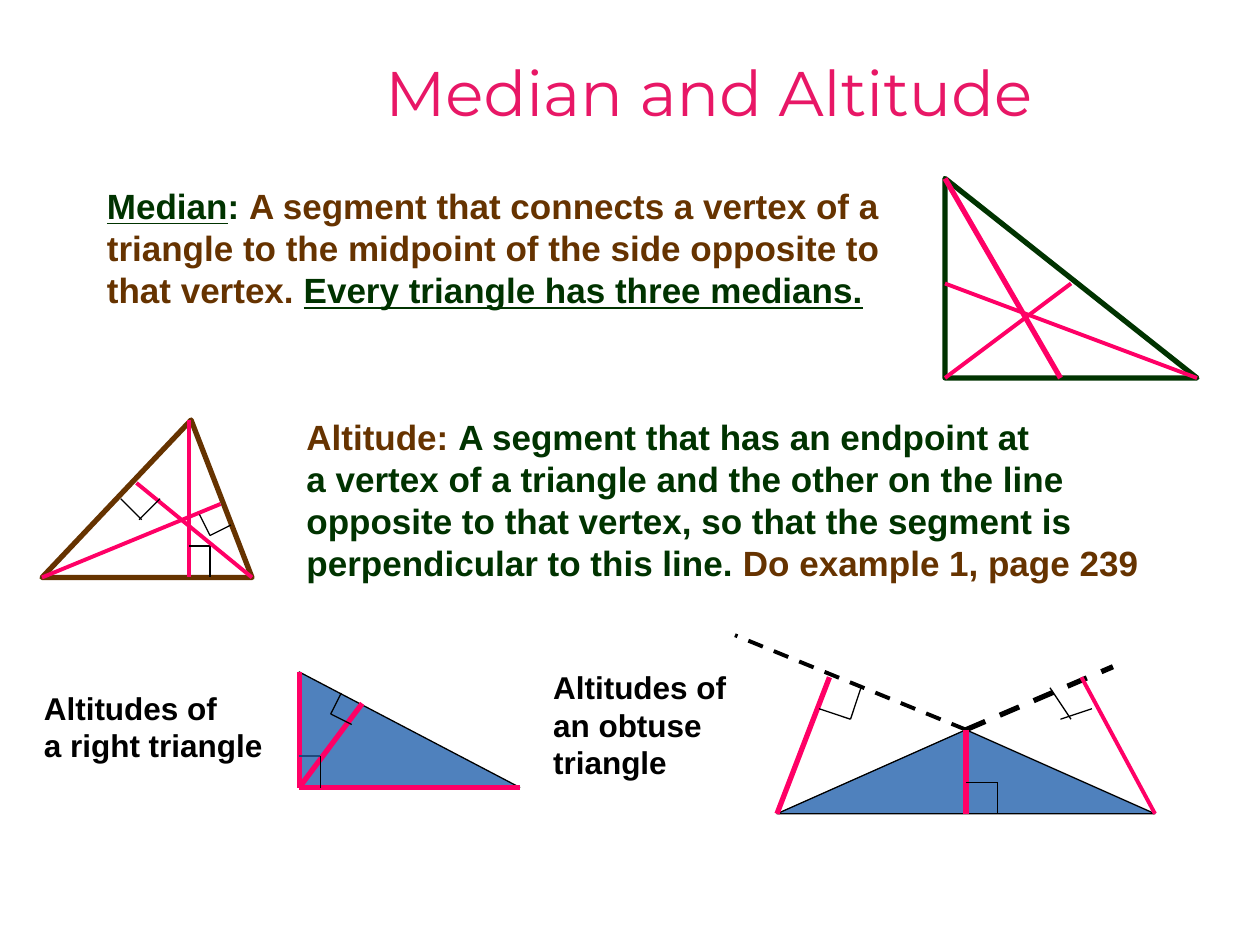
from dataclasses import dataclass
from itertools import pairwise

from lxml import etree
from pptx import Presentation
from pptx import util as u
from pptx.dml.color import RGBColor
from pptx.enum import dml, shapes, text
from pptx.oxml.ns import qn

UNITS_PER_INCH = 24
GREEN = RGBColor(0x00, 0x33, 0x00)
BROWN = RGBColor(0x66, 0x33, 0x00)
PINK = RGBColor(0xFF, 0x00, 0x66)
TITLE_PINK = RGBColor(0xE8, 0x17, 0x66)
BLACK = RGBColor(0x00, 0x00, 0x00)
BLUE = RGBColor(0x4F, 0x81, 0xBD)
NAVY = RGBColor(0x1F, 0x49, 0x7D)
RIGHT = shapes.MSO_SHAPE.RIGHT_TRIANGLE
ISOSCELES = shapes.MSO_SHAPE.ISOSCELES_TRIANGLE

Point = tuple[float, float]


@dataclass(frozen=True)
class Stroke:
    points: tuple[Point, ...]
    color: RGBColor = PINK
    width: float = 2.25
    dashed: bool = False


@dataclass(frozen=True)
class Figure:
    kind: shapes.MSO_SHAPE
    area: tuple[float, float, float, float]
    color: RGBColor
    width: float
    strokes: tuple[Stroke, ...]
    fill: RGBColor | None = None
    apex: float | None = None


@dataclass(frozen=True)
class Span:
    words: str
    color: RGBColor = BLACK
    underline: bool = False


@dataclass(frozen=True)
class Passage:
    area: tuple[float, float, float, float]
    size: float
    paras: tuple[tuple[Span, ...], ...]


def corner(*points: Point) -> Stroke:
    return Stroke(points, BLACK, 0.75)


FIGURES = (
    Figure(RIGHT, (180, 34, 48, 38), GREEN, 3, (
        Stroke(((180, 72), (204, 54))),
        Stroke(((180, 34), (202, 72)), width=3),
        Stroke(((180, 54), (228, 72))),
    )),
    Figure(ISOSCELES, (8, 80, 40, 30), BROWN, 3, (
        Stroke(((36, 80), (36, 110))),
        corner((36, 104), (40, 104), (40, 110)),
        Stroke(((42, 96), (8, 110))),
        corner((44, 100), (40, 102), (38, 98)),
        Stroke(((26, 92), (48, 110))),
        corner((23, 95), (27, 99)),
        corner((30.5, 95), (26.5, 99)),
    ), apex=0.71),
    Figure(RIGHT, (57, 128, 42, 22), BLACK, 0.75, (
        Stroke(((57, 150), (69, 134)), width=3),
        corner((65, 132), (63, 136), (67, 138)),
        Stroke(((57, 128), (57, 150), (99, 150)), width=3),
        Stroke(((57, 144), (61, 144)), NAVY, 1.5),
        corner((61, 144), (61, 150)),
    ), fill=BLUE),
    Figure(ISOSCELES, (148, 139, 72, 16), BLACK, 0.75, (
        Stroke(((184, 139), (212, 127)), BLACK, 3, True),
        Stroke(((206, 129), (220, 155))),
        corner((200, 131), (204, 137)),
        corner((208, 135), (202, 137)),
        Stroke(((184, 139), (140, 121)), BLACK, 2.25, True),
        Stroke(((158, 129), (148, 155)), width=3),
        corner((164, 131), (162, 137), (156, 135)),
        Stroke(((184, 139), (184, 155)), width=3),
        corner((184, 149), (190, 149), (190, 155)),
    ), fill=BLUE, apex=0.5),
)

PASSAGES = (
    Passage((18, 34, 156, 27), 20, ((
        Span("Median", GREEN, True),
        Span(": ", GREEN),
        Span("A segment that connects a vertex of a triangle to the midpoint "
             "of the side opposite to that vertex. ", BROWN),
        Span("Every triangle has three medians.", GREEN, True),
    ),)),
    Passage((56, 78, 184, 35), 20, (
        (Span("Altitude: ", BROWN), Span("A segment that has an endpoint at", GREEN)),
        (Span("a vertex of a triangle and the other on the line", GREEN),),
        (Span("opposite to that vertex, so that the segment is", GREEN),),
        (Span("perpendicular to this line. ", GREEN), Span("Do example 1, page 239", BROWN)),
    )),
    Passage((6, 130, 60, 22), 18, (
        (Span("Altitudes of"),), (Span("a right triangle"),),
    )),
    Passage((103, 126, 49, 31), 18, (
        (Span("Altitudes of"),), (Span("an obtuse"),), (Span("triangle"),),
    )),
)


def grid(*values: float) -> list[u.Emu]:
    return [u.Inches(value / UNITS_PER_INCH) for value in values]


def draw_stroke(group, stroke: Stroke) -> None:
    for start, end in pairwise(stroke.points):
        segment = group.shapes.add_connector(
            shapes.MSO_CONNECTOR.STRAIGHT, *grid(*start, *end))
        segment.line.color.rgb = stroke.color
        segment.line.width = u.Pt(stroke.width)
        if stroke.dashed:
            segment.line.dash_style = dml.MSO_LINE.DASH
        etree.SubElement(segment._element.spPr, qn("a:effectLst"))


def draw_figure(page, figure: Figure) -> None:
    group = page.shapes.add_group_shape()
    triangle = group.shapes.add_shape(figure.kind, *grid(*figure.area))
    triangle.shadow.inherit = False
    if figure.apex is not None:
        triangle.adjustments[0] = figure.apex
    if figure.fill is None:
        triangle.fill.background()
    else:
        triangle.fill.solid()
        triangle.fill.fore_color.rgb = figure.fill
    triangle.line.color.rgb = figure.color
    triangle.line.width = u.Pt(figure.width)
    for stroke in figure.strokes:
        draw_stroke(group, stroke)


def write_passage(page, passage: Passage) -> None:
    frame = page.shapes.add_textbox(*grid(*passage.area)).text_frame
    frame.word_wrap = True
    for index, spans in enumerate(passage.paras):
        para = frame.paragraphs[0] if index == 0 else frame.add_paragraph()
        for span in spans:
            run = para.add_run()
            run.text = span.words
            run.font.name = "Arial"
            run.font.size = u.Pt(passage.size)
            run.font.bold = True
            run.font.underline = span.underline
            run.font.color.rgb = span.color


def write_title(page) -> None:
    title = page.shapes.title
    title.left, title.top, title.width, title.height = grid(33, 9, 204, 24)
    frame = title.text_frame
    frame.text = "Median and Altitude"
    frame.vertical_anchor = text.MSO_ANCHOR.TOP
    para = frame.paragraphs[0]
    para.alignment = text.PP_ALIGN.CENTER
    font = para.runs[0].font
    font.name = "Montserrat"
    font.size = u.Pt(36)
    font.color.rgb = TITLE_PINK


def main() -> None:
    deck = Presentation()
    deck.slide_width, deck.slide_height = u.Inches(10), u.Inches(7.5)
    page = deck.slides.add_slide(deck.slide_layouts.get_by_name("Title Only"))
    write_title(page)
    for figure in FIGURES:
        draw_figure(page, figure)
    for passage in PASSAGES:
        write_passage(page, passage)
    deck.save("out.pptx")


if __name__ == "__main__":
    main()
